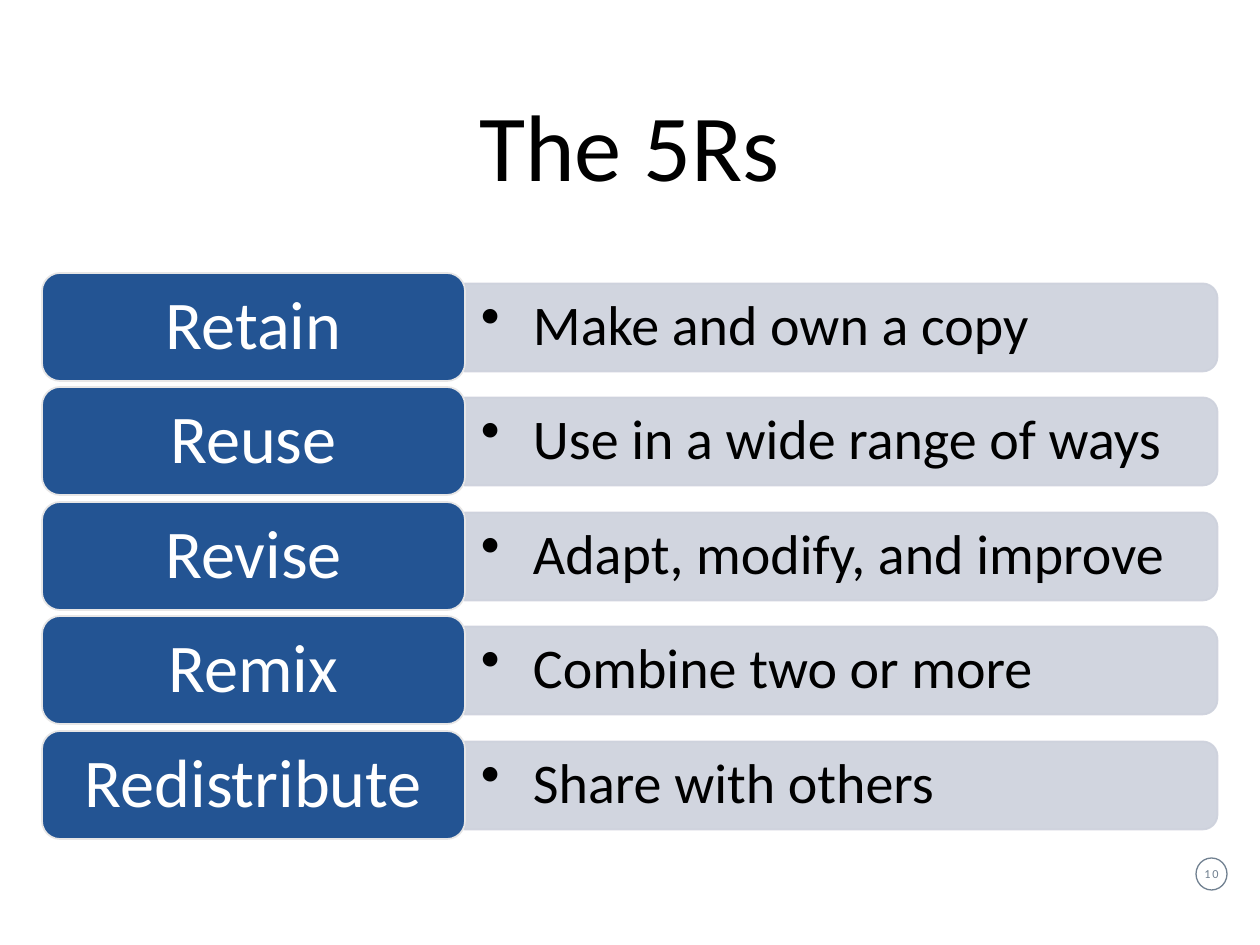
from dataclasses import dataclass

from lxml.etree import SubElement
from pptx import Presentation
from pptx.dml.color import RGBColor
from pptx.enum.shapes import MSO_SHAPE
from pptx.enum.text import MSO_ANCHOR, MSO_AUTO_SIZE, PP_ALIGN
from pptx.oxml.ns import qn
from pptx.shapes.autoshape import Shape
from pptx.slide import Slide
from pptx.text.text import TextFrame, _Paragraph as Paragraph, _Run as Run
from pptx.util import Emu, Pt

PX_PER_INCH = 126


@dataclass(frozen=True)
class Theme:
    font: str = "Calibri"
    black: str = "000000"
    white: str = "FFFFFF"
    label_fill: str = "235493"
    label_line: str = "E7E6E6"
    bar: str = "CDD1DC"
    number: str = "708090"
    title_size: int = 54
    label_size: int = 39
    detail_size: int = 32
    number_size: int = 7


@dataclass(frozen=True)
class Box:
    left: int
    top: int
    width: int
    height: int

    def emu(self) -> tuple[Emu, Emu, Emu, Emu]:
        return px(self.left), px(self.top), px(self.width), px(self.height)


@dataclass(frozen=True)
class Permission:
    name: str
    detail: str


THEME = Theme()
PERMISSIONS = [
    Permission("Retain", "Make and own a copy"),
    Permission("Reuse", "Use in a wide range of ways"),
    Permission("Revise", "Adapt, modify, and improve"),
    Permission("Remix", "Combine two or more"),
    Permission("Redistribute", "Share with others"),
]
FIRST_TOP, LAST_TOP = 273, 731
LABEL_LEFT, LABEL_WIDTH, LABEL_HEIGHT = 42, 423, 108
BAR_LEFT, BAR_WIDTH, BAR_HEIGHT = 465, 753, 88
BULLET_INDENT = 52


def px(length: int) -> Emu:
    return Emu(round(length * 914400 / PX_PER_INCH))


def set_frame(frame: TextFrame, inset: int, wrap: bool = True) -> None:
    frame.word_wrap = wrap
    frame.auto_size = MSO_AUTO_SIZE.NONE
    frame.vertical_anchor = MSO_ANCHOR.MIDDLE
    frame.margin_left = frame.margin_right = px(inset)
    frame.margin_top = frame.margin_bottom = px(inset // 2)


def add_run(paragraph: Paragraph, text: str, size: int, color: str) -> Run:
    run = paragraph.add_run()
    run.text = text
    run.font.name = THEME.font
    run.font.size = Pt(size)
    run.font.color.rgb = RGBColor.from_string(color)
    return run


def add_outlined(slide: Slide, preset: MSO_SHAPE, box: Box, fill: str | None,
                 line: str, line_width: float = 1) -> Shape:
    shape = slide.shapes.add_shape(preset, *box.emu())
    shape.shadow.inherit = False
    if fill:
        shape.fill.solid()
        shape.fill.fore_color.rgb = RGBColor.from_string(fill)
    else:
        shape.fill.background()
    shape.line.color.rgb = RGBColor.from_string(line)
    shape.line.width = Pt(line_width)
    return shape


def set_opacity(shape: Shape, percent: int) -> None:
    """Apply the opacity to both the fill and the outline."""
    for color in shape._element.spPr.iter(qn("a:srgbClr")):
        SubElement(color, qn("a:alpha"), val=str(percent * 1000))


def add_bullet(paragraph: Paragraph) -> None:
    properties = paragraph._p.get_or_add_pPr()
    properties.set("marL", str(px(BULLET_INDENT)))
    properties.set("indent", str(-px(BULLET_INDENT)))
    SubElement(properties, qn("a:buChar"), char="•")


def add_title(slide: Slide, text: str) -> None:
    title = slide.shapes.title
    title.left, title.top, title.width, title.height = Box(94, 42, 1071, 203).emu()
    set_frame(title.text_frame, 12)
    paragraph = title.text_frame.paragraphs[0]
    paragraph.alignment = PP_ALIGN.CENTER
    add_run(paragraph, text, THEME.title_size, THEME.black)


def add_bar(slide: Slide, top: int, text: str) -> None:
    """Draw a bar rounded on its right side, with a bulleted line over it."""
    # The preset rounds its top corners, so a tall shape is turned by 90 degrees.
    shift = (BAR_WIDTH - BAR_HEIGHT) // 2
    upright = Box(BAR_LEFT + shift, top - shift, BAR_HEIGHT, BAR_WIDTH)
    bar = add_outlined(slide, MSO_SHAPE.ROUND_2_SAME_RECTANGLE, upright,
                       THEME.bar, THEME.bar)
    bar.rotation = 90
    set_opacity(bar, 90)

    text_box = slide.shapes.add_textbox(
        *Box(BAR_LEFT, top, BAR_WIDTH, BAR_HEIGHT).emu())
    set_frame(text_box.text_frame, 16)
    paragraph = text_box.text_frame.paragraphs[0]
    paragraph.line_spacing = 0.9
    add_bullet(paragraph)
    add_run(paragraph, text, THEME.detail_size, THEME.black)


def add_label(slide: Slide, top: int, text: str) -> None:
    label = add_outlined(slide, MSO_SHAPE.ROUNDED_RECTANGLE,
                         Box(LABEL_LEFT, top, LABEL_WIDTH, LABEL_HEIGHT),
                         THEME.label_fill, THEME.label_line)
    set_frame(label.text_frame, 20)
    paragraph = label.text_frame.paragraphs[0]
    paragraph.alignment = PP_ALIGN.CENTER
    paragraph.line_spacing = 0.9
    add_run(paragraph, text, THEME.label_size, THEME.white)


def add_slide_number(slide: Slide, text: str) -> None:
    circle = add_outlined(slide, MSO_SHAPE.OVAL, Box(1196, 858, 31, 32),
                          None, THEME.number, 0.75)
    set_frame(circle.text_frame, 0, wrap=False)
    paragraph = circle.text_frame.paragraphs[0]
    paragraph.alignment = PP_ALIGN.CENTER
    run = add_run(paragraph, text, THEME.number_size, THEME.number)
    run.font._element.set("spc", "110")


def main() -> None:
    presentation = Presentation()
    presentation.slide_width, presentation.slide_height = px(1260), px(945)
    slide = presentation.slides.add_slide(presentation.slide_layouts[5])

    add_title(slide, "The 5Rs")
    for index, permission in enumerate(PERMISSIONS):
        top = FIRST_TOP + (LAST_TOP - FIRST_TOP) * index // (len(PERMISSIONS) - 1)
        add_bar(slide, top + (LABEL_HEIGHT - BAR_HEIGHT) // 2, permission.detail)
        add_label(slide, top, permission.name)
    add_slide_number(slide, "10")

    presentation.save("out.pptx")


if __name__ == "__main__":
    main()
